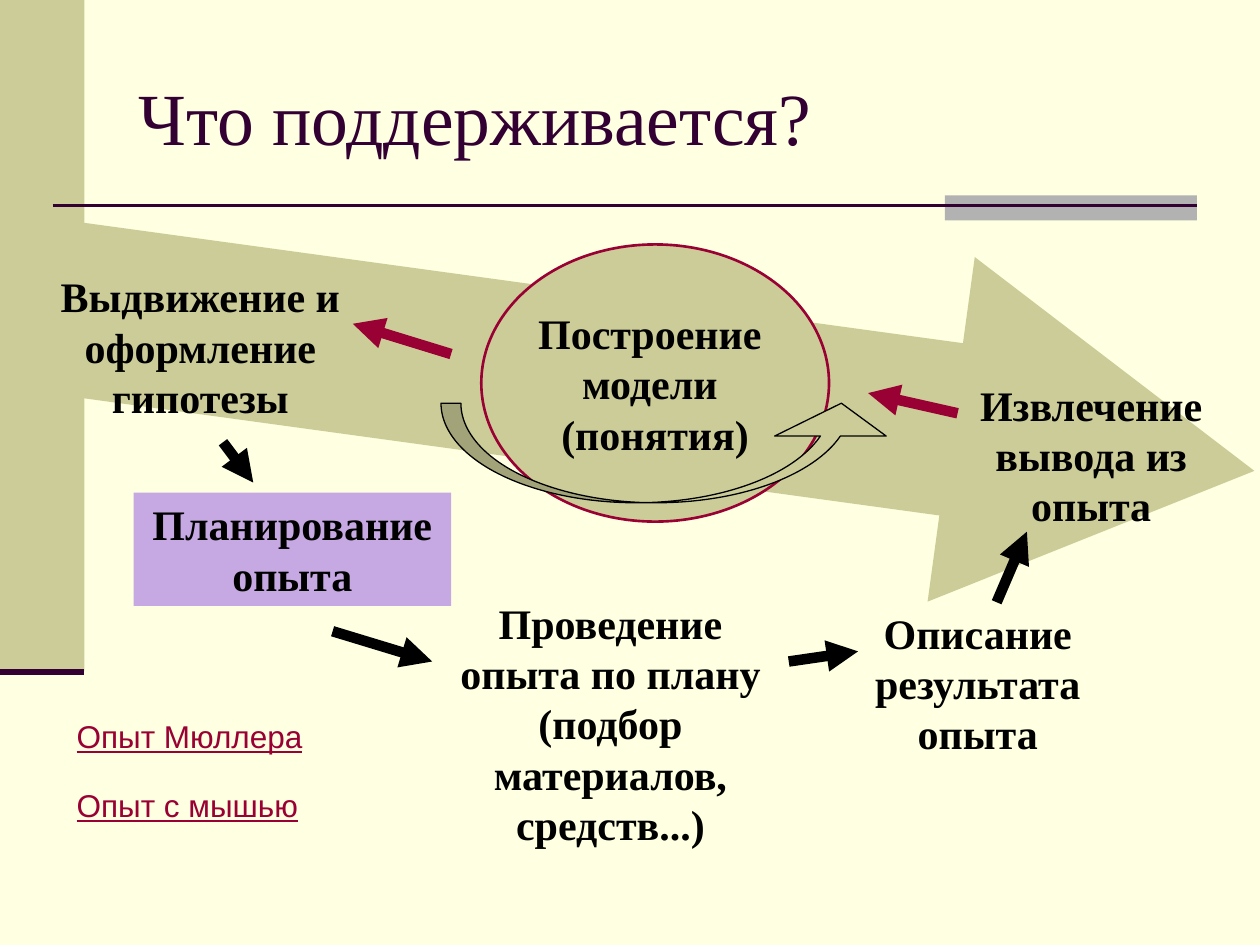
from pptx import Presentation
from pptx.dml.color import RGBColor
from pptx.enum.shapes import MSO_CONNECTOR, MSO_SHAPE
from pptx.enum.text import MSO_ANCHOR, MSO_AUTO_SIZE, PP_ALIGN
from pptx.oxml.ns import qn
from pptx.util import Inches, Pt
from lxml import etree

RECT, OVAL = MSO_SHAPE.RECTANGLE, MSO_SHAPE.OVAL
BIG_ARROW, LOOP_ARROW = MSO_SHAPE.RIGHT_ARROW, MSO_SHAPE.CURVED_UP_ARROW
STRAIGHT = MSO_CONNECTOR.STRAIGHT
LEFT, CENTER = PP_ALIGN.LEFT, PP_ALIGN.CENTER
TOP, MIDDLE = MSO_ANCHOR.TOP, MSO_ANCHOR.MIDDLE
GROW, FIXED = MSO_AUTO_SIZE.SHAPE_TO_FIT_TEXT, MSO_AUTO_SIZE.NONE

COLUMNS, ROWS = 100, 75
CREAM, OLIVE, GRAY, LILAC = "FFFFE1", "CCCC99", "B2B2B2", "C6A8E2"
PLUM, CRIMSON, BLACK = "330033", "990033", "000000"

STEP_FONT = {"name": "Times New Roman", "size": Pt(24), "bold": True}
TITLE_FONT = {"name": "Times New Roman", "size": Pt(42)}
LINK_FONT = {"name": "Arial", "size": Pt(18), "underline": True}


def color(value):
    return RGBColor.from_string(value)


class Painter:
    """Draws on one slide; lengths are columns and rows of a 100 x 75 grid."""

    def __init__(self, deck):
        self.page = deck.slides.add_slide(deck.slide_layouts[6])
        self.column = deck.slide_width / COLUMNS
        self.row = deck.slide_height / ROWS

    def place(self, *lengths):
        units = (self.column, self.row) * 2
        return [round(length * unit) for length, unit in zip(lengths, units)]

    def background(self, fill):
        backdrop = self.page.background.fill
        backdrop.solid()
        backdrop.fore_color.rgb = color(fill)

    def shape(self, kind, area, fill, line=None, width=1, turn=0, adjust=()):
        box = self.page.shapes.add_shape(kind, *self.place(*area))
        box.shadow.inherit = False
        box.rotation = turn
        box.fill.solid()
        box.fill.fore_color.rgb = color(fill)
        if line:
            box.line.color.rgb = color(line)
            box.line.width = Pt(width)
        else:
            box.line.fill.background()
        for index, value in enumerate(adjust):
            box.adjustments[index] = value
        return box

    def line(self, start, end, ink, width, arrow=False):
        link = self.page.shapes.add_connector(STRAIGHT, *self.place(*start, *end))
        link.line.color.rgb = color(ink)
        link.line.width = Pt(width)
        properties = link._element.spPr
        if arrow:
            etree.SubElement(properties.find(qn("a:ln")), qn("a:tailEnd"), type="triangle")
        etree.SubElement(properties, qn("a:effectLst"))

    def label(self, box, lines, font, ink=BLACK, align=CENTER, anchor=TOP,
              wrap=True, size=GROW):
        frame = box.text_frame
        settings = {"word_wrap": wrap, "auto_size": size, "vertical_anchor": anchor}
        for name, value in settings.items():
            setattr(frame, name, value)
        for index, words in enumerate(lines):
            para = frame.add_paragraph() if index else frame.paragraphs[0]
            para.alignment = align
            span = para.add_run()
            span.text = words
            span.font.color.rgb = color(ink)
            for name, value in font.items():
                setattr(span.font, name, value)

    def text(self, area, words, font, **layout):
        box = self.page.shapes.add_textbox(*self.place(*area))
        self.label(box, [words], font, **layout)


def main():
    deck = Presentation()
    deck.slide_width, deck.slide_height = Inches(10), Inches(7.5)
    painter = Painter(deck)

    # Frame: side band, accent bar and rules
    painter.background(CREAM)
    painter.shape(RECT, (0, 0, 6.7, 53.3), OLIVE)
    painter.shape(RECT, (75, 15.5, 20, 2), GRAY)
    painter.line((4.2, 16.3), (95, 16.3), PLUM, 1.5)
    painter.line((0, 53.3), (6.7, 53.3), PLUM, 3.5)

    # Large arrow behind the cycle
    painter.shape(BIG_ARROW, (3.1, 17, 96.9, 27.6), OLIVE, turn=7.8, adjust=(0.5, 0.88))

    # Steps of the cycle
    planning = painter.shape(RECT, (10.6, 39.1, 25.2, 9), LILAC)
    painter.label(planning, ["Планирование опыта"], STEP_FONT)
    steps = [
        ((2.7, 21, 26.4, 13), "Выдвижение и оформление гипотезы"),
        ((33.5, 46.9, 29.9, 21), "Проведение опыта по плану (подбор материалов, средств...)"),
        ((65, 47.7, 25.2, 13), "Описание результата опыта"),
        ((75.2, 29.6, 22.8, 13), "Извлечение вывода из опыта"),
    ]
    for area, words in steps:
        painter.text(area, words, STEP_FONT)

    # Model in the centre
    model = painter.shape(OVAL, (38.2, 19.4, 27.6, 22), OLIVE, CRIMSON, 1.5)
    painter.label(model, ["Построение ", "модели ", "(понятия)"], STEP_FONT,
                  anchor=MIDDLE, wrap=False, size=FIXED)

    # Arrows between the steps
    arrows = [
        ((17.7, 35.1), (20.1, 38.3), BLACK),
        ((26.4, 50.1), (34.3, 52.5), BLACK),
        ((79.1, 47.8), (81.5, 42.2), BLACK),
        ((62.6, 52.5), (68.1, 51.7), BLACK),
        ((35.8, 28.1), (28, 25.7), CRIMSON),
        ((76, 32.8), (68.9, 31.2), CRIMSON),
    ]
    for start, end, ink in arrows:
        painter.line(start, end, ink, 6, arrow=True)
    painter.shape(LOOP_ARROW, (35, 32, 36.2, 7.9), OLIVE, BLACK, 0.75,
                  adjust=(0.2, 1.12, 0.33))

    # Title and experiment names
    painter.text((10, 3, 85, 12.5), "Что поддерживается?", TITLE_FONT,
                 ink=PLUM, align=LEFT, anchor=MIDDLE, size=FIXED)
    for top, words in ((56.4, "Опыт Мюллера"), (61.9, "Опыт с мышью")):
        painter.text((5.1, top, 25.2, 4), words, LINK_FONT, ink=CRIMSON, align=LEFT)

    deck.save("out.pptx")


if __name__ == "__main__":
    main()
